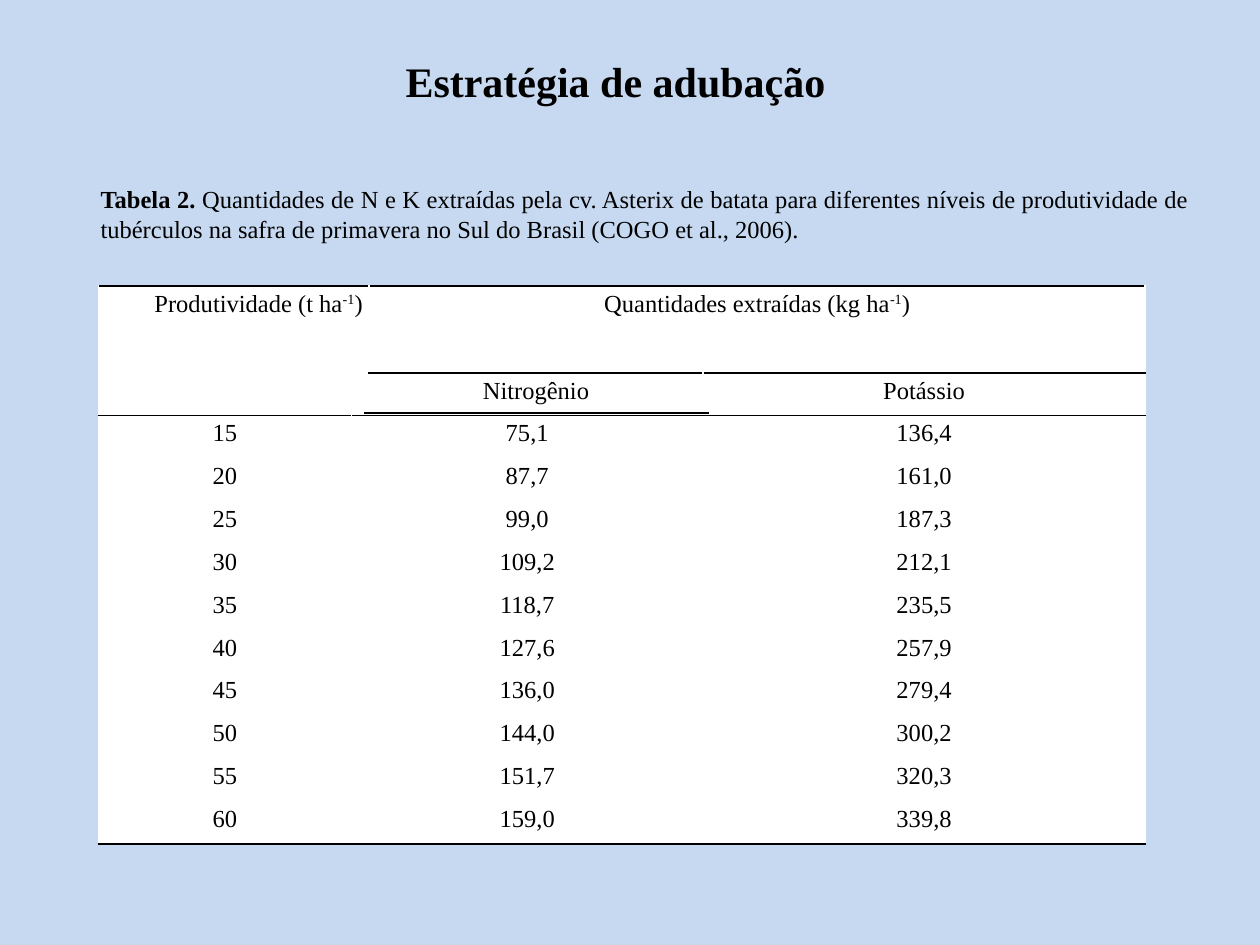
import pptx
import pptx.dml.color
import pptx.enum.shapes
import pptx.enum.text
import pptx.oxml
import pptx.oxml.ns
import pptx.util
from pptx.util import Inches

BLACK = pptx.dml.color.RGBColor(0x00, 0x00, 0x00)
WHITE = pptx.dml.color.RGBColor(0xFF, 0xFF, 0xFF)
SKY = pptx.dml.color.RGBColor(0xC6, 0xD9, 0xF1)
FONT = "Times New Roman"
ALIGN = pptx.enum.text.PP_ALIGN
ANCHOR = pptx.enum.text.MSO_ANCHOR

COL_WIDTHS = (2.01, 0.11, 2.65, 3.51)
ROW_HEIGHTS = (0.69,) + (0.34,) * 11
YIELDS = range(15, 61, 5)
NITROGEN = ("75,1", "87,7", "99,0", "109,2", "118,7",
            "127,6", "136,0", "144,0", "151,7", "159,0")
POTASSIUM = ("136,4", "161,0", "187,3", "212,1", "235,5",
             "257,9", "279,4", "300,2", "320,3", "339,8")


def add_run(p, text, size=14, bold=False, superscript=False):
    """Append one formatted run to a paragraph."""
    r = p.add_run()
    r.text = text
    r.font.name = FONT
    r.font.size = pptx.util.Pt(size)
    r.font.bold = bold
    r.font.color.rgb = BLACK
    if superscript:
        r.font._element.set("baseline", "30000")


def add_title(slide, left, top, width, height):
    """Place the slide title."""
    sp = slide.shapes.title
    sp.left, sp.top, sp.width, sp.height = left, top, width, height
    tf = sp.text_frame
    tf.auto_size = pptx.enum.text.MSO_AUTO_SIZE.NONE
    tf.vertical_anchor = ANCHOR.TOP
    p = tf.paragraphs[0]
    p.alignment = ALIGN.CENTER
    add_run(p, "Estratégia de adubação", 24, bold=True)


def add_caption(slide, left, top, width, height):
    """Place the justified table caption."""
    tf = slide.shapes.add_textbox(left, top, width, height).text_frame
    tf.word_wrap = True
    tf.vertical_anchor = ANCHOR.MIDDLE
    p = tf.paragraphs[0]
    p.alignment = ALIGN.JUSTIFY
    add_run(p, "Tabela 2.", bold=True)
    add_run(p, " Quantidades de N e K extraídas pela cv. Asterix de batata para "
               "diferentes níveis de produtividade de tubérculos na safra de "
               "primavera no Sul do Brasil (COGO et al., 2006).")


def set_border(cell, tag, index):
    """Draw a thin black line on one edge of a cell."""
    ln = pptx.oxml.parse_xml(
        f'<a:{tag} {pptx.oxml.ns.nsdecls("a")} w="12700"><a:solidFill>'
        f'<a:srgbClr val="{BLACK}"/></a:solidFill></a:{tag}>')
    cell._tc.get_or_add_tcPr().insert(index, ln)


def format_cell(cell, top, bottom):
    """Set the fill, margins, paragraph spacing and ruled edges of a cell."""
    cell.fill.solid()
    cell.fill.fore_color.rgb = WHITE
    cell.margin_left = cell.margin_right = Inches(0.05)
    cell.margin_top = cell.margin_bottom = 0
    p = cell.text_frame.paragraphs[0]
    p.alignment = ALIGN.CENTER
    p.line_spacing = pptx.util.Pt(18)
    p.space_before = pptx.util.Pt(6)
    edges = [tag for tag, ruled in (("lnT", top), ("lnB", bottom)) if ruled]
    for index, tag in enumerate(edges):
        set_border(cell, tag, index)


def add_nutrient_table(slide, left, top, width, height):
    """Build the table of extracted nutrients by yield."""
    last = len(ROW_HEIGHTS) - 1
    table = slide.shapes.add_table(
        len(ROW_HEIGHTS), len(COL_WIDTHS), left, top, width, height).table
    table.first_row = table.horz_banding = False
    for col, w in zip(table.columns, COL_WIDTHS):
        col.width = Inches(w)
    for row, h in zip(table.rows, ROW_HEIGHTS):
        row.height = Inches(h)
    for i in range(last + 1):
        for j in range(len(COL_WIDTHS)):
            grouped = j >= 2
            format_cell(table.cell(i, j),
                        top=i in (0, 2) or (i == 1 and grouped),
                        bottom=i in (1, last) or (i == 0 and grouped))
        spans = ((0, 1), (2, 3)) if i == 0 else ((0, 1),) if i == 1 else ((1, 2),)
        for first, end in spans:
            table.cell(i, first).merge(table.cell(i, end))

    headings = ((0, "Produtividade (t ha", ALIGN.RIGHT),
                (2, "Quantidades extraídas (kg ha", ALIGN.CENTER))
    for j, text, align in headings:
        p = table.cell(0, j).text_frame.paragraphs[0]
        p.alignment = align
        add_run(p, text)
        add_run(p, "-1", superscript=True)
        add_run(p, ")")
    for j, text in ((2, "Nitrogênio"), (3, "Potássio")):
        add_run(table.cell(1, j).text_frame.paragraphs[0], text)
    for i, values in enumerate(zip(YIELDS, NITROGEN, POTASSIUM), start=2):
        for j, value in zip((0, 1, 3), values):
            add_run(table.cell(i, j).text_frame.paragraphs[0], str(value))


def add_rule(slide, left, top, width):
    """Draw the horizontal rule under the nitrogen heading."""
    line = slide.shapes.add_connector(
        pptx.enum.shapes.MSO_CONNECTOR.STRAIGHT, left, top, left + width, top)
    line.line.color.rgb = BLACK
    line.line.width = pptx.util.Pt(1)
    line._element.spPr.append(
        pptx.oxml.parse_xml(f'<a:effectLst {pptx.oxml.ns.nsdecls("a")}/>'))


def main():
    """Build and save the slide."""
    prs = pptx.Presentation()
    prs.slide_width, prs.slide_height = Inches(10), Inches(7.5)
    slide = prs.slides.add_slide(prs.slide_layouts[5])
    slide.background.fill.solid()
    slide.background.fill.fore_color.rgb = SKY
    add_title(slide, Inches(0.94), Inches(0.39), Inches(7.89), Inches(0.88))
    add_nutrient_table(slide, Inches(0.78), Inches(2.27), Inches(8.28), Inches(4.45))
    add_caption(slide, Inches(0.7), Inches(1.41), Inches(8.84), Inches(0.57))
    add_rule(slide, Inches(2.89), Inches(3.28), Inches(2.74))
    prs.save("out.pptx")


if __name__ == "__main__":
    main()
